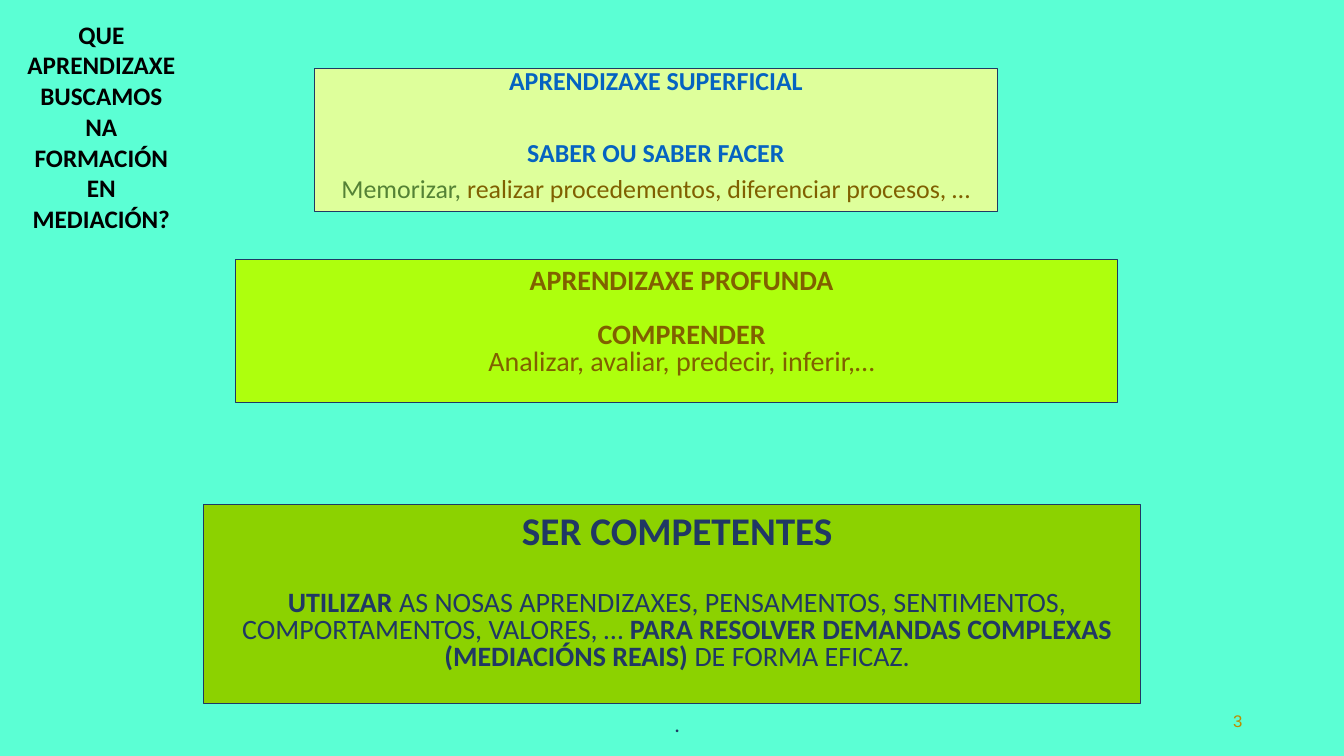
import pptx
import pptx.dml.color
import pptx.enum.shapes
import pptx.enum.text
import pptx.oxml.ns
import pptx.util
from lxml import etree

Inches = pptx.util.Inches
Pt = pptx.util.Pt
RGBColor = pptx.dml.color.RGBColor
Align = pptx.enum.text.PP_ALIGN
Anchor = pptx.enum.text.MSO_ANCHOR

AQUA = RGBColor(0x5B, 0xFF, 0xD4)
PALE_LIME = RGBColor(0xDE, 0xFF, 0x9B)
LIME = RGBColor(0xAE, 0xFF, 0x0D)
GREEN = RGBColor(0x8C, 0xD2, 0x00)
NAVY = RGBColor(0x20, 0x38, 0x64)
BLUE = RGBColor(0x05, 0x63, 0xC1)
MOSS = RGBColor(0x54, 0x82, 0x35)
BROWN = RGBColor(0x80, 0x60, 0x00)
GOLD = RGBColor(0xBC, 0x8C, 0x00)
BLACK = RGBColor(0x00, 0x00, 0x00)

DEFAULT_INSETS = (0.1, 0.05, 0.1, 0.05)
WIDE_INSETS = (0.2, 0.1, 0.1, 0.05)


class SlideBuilder:
    font = "Calibri"

    def __init__(self, deck):
        self.page = deck.slides.add_slide(deck.slide_layouts[6])
        self.page.background.fill.solid()
        self.page.background.fill.fore_color.rgb = AQUA

    def add_spans(self, para, spans, size, align=Align.CENTER, font=None, spacing=None, before=0):
        para.alignment = align
        para.space_before = Pt(before)
        if spacing:
            para.line_spacing = spacing
        for text, color, bold in spans:
            span = para.add_run()
            span.text = text
            span.font.name = font or self.font
            span.font.size = Pt(size)
            span.font.bold = bold
            span.font.color.rgb = color

    def panel(self, left, top, width, height, fill, spacing, insets, lines):
        box = self.page.shapes.add_shape(
            pptx.enum.shapes.MSO_SHAPE.RECTANGLE,
            Inches(left), Inches(top), Inches(width), Inches(height))
        box.shadow.inherit = False
        box.fill.solid()
        box.fill.fore_color.rgb = fill
        box.line.color.rgb = NAVY
        box.line.width = Pt(0.75)
        frame = box.text_frame
        frame.word_wrap = True
        frame.vertical_anchor = Anchor.TOP
        (frame.margin_left, frame.margin_top,
         frame.margin_right, frame.margin_bottom) = map(Inches, insets)
        for index, (size, before, spans) in enumerate(lines):
            para = frame.add_paragraph() if index else frame.paragraphs[0]
            self.add_spans(para, spans, size, spacing=spacing, before=before)

    def page_number(self, left, top, width, height, number):
        box = self.page.shapes.add_textbox(
            Inches(left), Inches(top), Inches(width), Inches(height))
        frame = box.text_frame
        frame.word_wrap = True
        frame.vertical_anchor = Anchor.MIDDLE
        self.add_spans(frame.paragraphs[0], [(number, GOLD, False)], 12, Align.RIGHT, "Arial")

    def title_table(self, left, top, width, height, title):
        table = self.page.shapes.add_table(
            1, 1, Inches(left), Inches(top), Inches(width), Inches(height)).table
        table.first_row = False
        table.horz_banding = False
        cell = table.cell(0, 0)
        cell.fill.background()
        properties = cell._tc.get_or_add_tcPr()
        for position, side in enumerate(("lnL", "lnR", "lnT", "lnB")):
            border = etree.Element(pptx.oxml.ns.qn(f"a:{side}"))
            etree.SubElement(border, pptx.oxml.ns.qn("a:noFill"))
            properties.insert(position, border)
        self.add_spans(cell.text_frame.paragraphs[0], [(title, BLACK, True)], 18)


def main():
    deck = pptx.Presentation()
    deck.slide_width = Inches(13.33)
    deck.slide_height = Inches(7.5)
    slide = SlideBuilder(deck)

    slide.panel(3.12, 0.68, 6.77, 1.42, PALE_LIME, 0.7, DEFAULT_INSETS, [
        (18.5, 10, [("APRENDIZAXE SUPERFICIAL", BLUE, True)]),
        (18.5, 35.8, [("SABER OU SABER FACER", BLUE, True)]),
        (18.5, 10, [("Memorizar, ", MOSS, False),
                    ("realizar procedementos, diferenciar procesos, …", BROWN, False)]),
    ])
    slide.page_number(9.42, 6.95, 3, 0.4, "3")
    slide.panel(2.34, 2.57, 8.74, 1.42, LIME, 0.8, WIDE_INSETS, [
        (20, 0, [("APRENDIZAXE PROFUNDA", BROWN, True)]),
        (20, 19.5, [("COMPRENDER", BROWN, True)]),
        (20, 0, [("Analizar, avaliar, predecir, inferir,…", BROWN, False)]),
    ])
    slide.panel(2.02, 5.01, 9.29, 1.97, GREEN, 0.8, WIDE_INSETS, [
        (28, 0, [("SER COMPETENTES", NAVY, True)]),
        (20, 27.3, [
            ("UTILIZAR", NAVY, True),
            (" AS NOSAS APRENDIZAXES, PENSAMENTOS, SENTIMENTOS, "
             "COMPORTAMENTOS, VALORES, … ", NAVY, False),
            ("PARA RESOLVER DEMANDAS COMPLEXAS (MEDIACIÓNS REAIS) ", NAVY, True),
            ("DE FORMA EFICAZ.", NAVY, False)]),
        (16, 31.2, [(".", NAVY, False)]),
    ])
    slide.title_table(0.17, 0.15, 1.67, 1.88,
                      "QUE APRENDIZAXE BUSCAMOS NA FORMACIÓN EN MEDIACIÓN?")
    deck.save("out.pptx")


if __name__ == "__main__":
    main()
